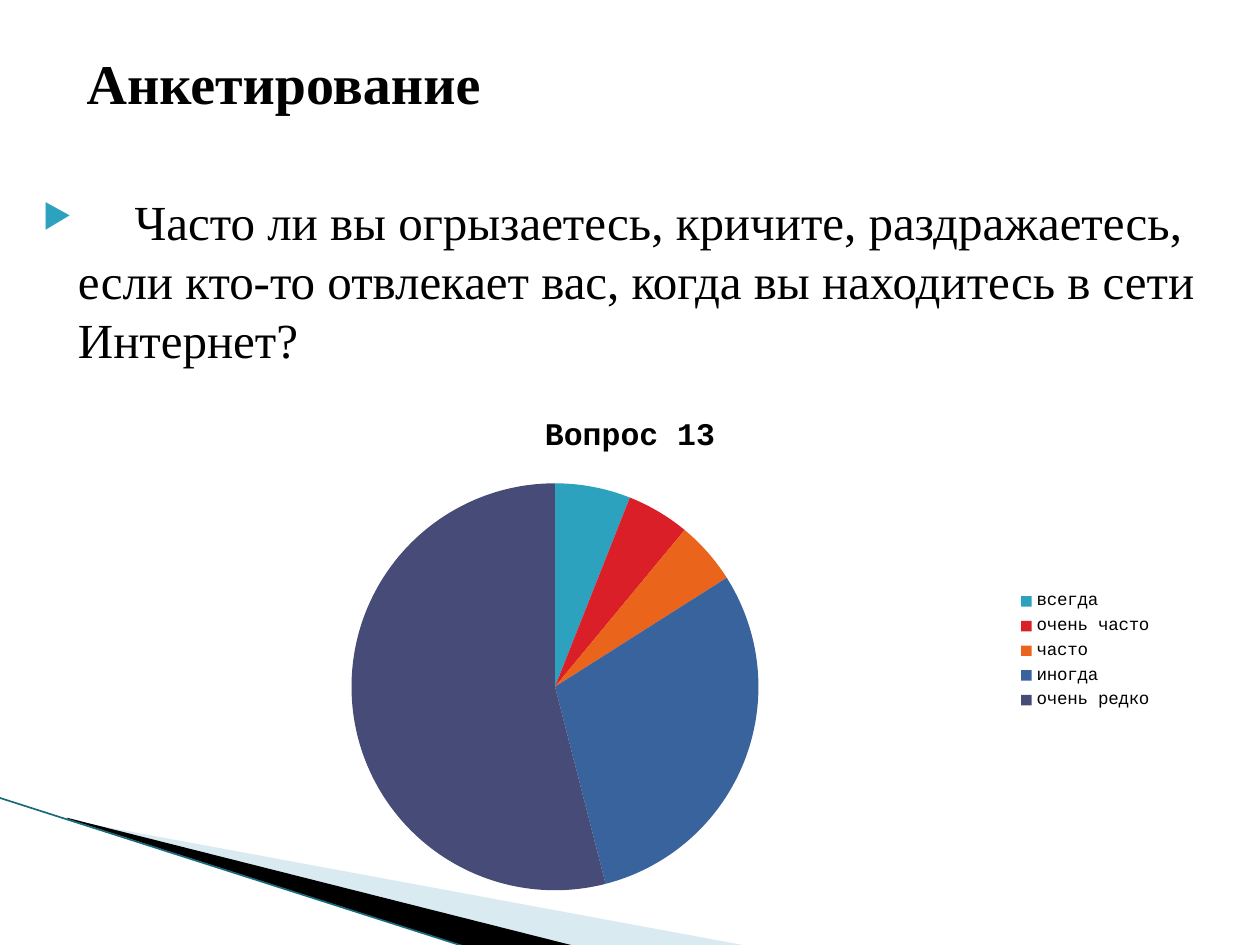
from lxml import etree
from pptx import Presentation
from pptx.chart.data import CategoryChartData
from pptx.dml.color import RGBColor
from pptx.enum.chart import XL_CHART_TYPE as ChartType, XL_LEGEND_POSITION as LegendPos
from pptx.enum.shapes import MSO_CONNECTOR as Connector
from pptx.enum.text import MSO_ANCHOR as Anchor
from pptx.oxml import parse_xml
from pptx.oxml.ns import nsdecls, qn
from pptx.util import Inches, Pt


def rgb(code):
    return RGBColor.from_string(code)


def add_text(text, left, top, width, height, size, bold=False,
             anchor=Anchor.TOP, paragraph_xml=(), indent=None):
    frame = slide.shapes.add_textbox(
        Inches(left), Inches(top), Inches(width), Inches(height)).text_frame
    frame.word_wrap = True
    frame.vertical_anchor = anchor
    paragraph = frame.paragraphs[0]
    props = paragraph._p.get_or_add_pPr()
    if indent:
        props.set("marL", str(Inches(indent[0])))
        props.set("indent", str(Inches(indent[1])))
    for xml in paragraph_xml:
        props.append(parse_xml(xml))
    run = paragraph.add_run()
    run.text = text
    run.font.name = "Times New Roman"
    run.font.size = Pt(size)
    run.font.bold = bold
    run.font.color.rgb = rgb("000000")


prs = Presentation()
prs.slide_width, prs.slide_height = Inches(10), Inches(7.5)
slide = prs.slides.add_slide(prs.slide_layouts[6])

# Corner wedges: points, colour, opacity in percent
wedges = [
    ([(0.55, 6.51), (5.95, 7.51), (4.56, 7.51), (0.55, 6.5)], "A0CBDC", 40),
    ([(0.53, 6.49), (4.57, 7.51), (3.72, 7.52), (0.54, 6.5)], "000000", 100),
]
for points, color, opacity in wedges:
    start, *rest = [(Inches(x), Inches(y)) for x, y in points]
    outline = slide.shapes.build_freeform(*start)
    outline.add_line_segments(rest, close=True)
    wedge = outline.convert_to_shape()
    wedge.shadow.inherit = False
    wedge.line.fill.background()
    wedge.fill.solid()
    wedge.fill.fore_color.rgb = rgb(color)
    if opacity < 100:
        solid = wedge._element.spPr.find(qn("a:solidFill"))
        etree.SubElement(solid[0], qn("a:alpha")).set("val", str(opacity * 1000))

# Corner edge line
edge = slide.shapes.add_connector(
    Connector.STRAIGHT, Inches(-0.01), Inches(6.33), Inches(3.71), Inches(7.52))
edge.line.color.rgb = rgb("1A6A7D")
edge.line.width = Pt(0.95)
etree.SubElement(edge._element.spPr, qn("a:effectLst"))

# Question, with a tab after the bullet
ns = nsdecls("a")
question_format = [
    f'<a:buClr {ns}><a:srgbClr val="2DA2BF"/></a:buClr>',
    f'<a:buSzPct {ns} val="68000"/>',
    f'<a:buChar {ns} char="▶"/>',
    f'<a:tabLst {ns}><a:tab pos="{Inches(0.85)}" algn="l"/></a:tabLst>',
]
add_text("\tЧасто ли вы огрызаетесь, кричите, раздражаетесь, если кто-то "
         "отвлекает вас, когда вы находитесь в сети Интернет?",
         0.12, 1.47, 9.58, 1.6, size=28,
         paragraph_xml=question_format, indent=(0.4, -0.28))

# Title
add_text("Анкетирование", 0.59, 0.03, 8.17, 1.25, size=32, bold=True,
         anchor=Anchor.MIDDLE)

# Pie of answers
answers = [
    ("всегда", 6, "2DA2BF"),
    ("очень часто", 5, "DA1F28"),
    ("часто", 5, "EB641B"),
    ("иногда", 30, "39639D"),
    ("очень редко", 54, "474B78"),
]
data = CategoryChartData()
data.categories = [name for name, _, _ in answers]
data.add_series("Вопрос 13", [value for _, value, _ in answers])
chart = slide.shapes.add_chart(
    ChartType.PIE, Inches(0.75), Inches(3.12), Inches(8.5), Inches(4.09), data).chart
chart.font.name = "Courier New"
chart.font.size = Pt(10)
chart.font.color.rgb = rgb("000000")

chart.has_title = True
heading = chart.chart_title.text_frame
heading.text = "Вопрос 13"
heading_font = heading.paragraphs[0].runs[0].font
heading_font.name = "Courier New"
heading_font.size = Pt(18)
heading_font.bold = True
heading_font.color.rgb = rgb("000000")

chart.has_legend = True
chart.legend.position = LegendPos.RIGHT
chart.legend.include_in_layout = False

pie = chart.plots[0]
pie.vary_by_categories = True
for index, (_, _, color) in enumerate(answers):
    fill = pie.series[0].points[index].format.fill
    fill.solid()
    fill.fore_color.rgb = rgb(color)

# Place of the pie, as shares of the chart area
plot_area = chart._chartSpace.chart.plotArea
for old in plot_area.findall(qn("c:layout")):
    plot_area.remove(old)
plot_area.insert(0, parse_xml(
    f'<c:layout {nsdecls("c")}><c:manualLayout><c:layoutTarget val="inner"/>'
    '<c:xMode val="edge"/><c:yMode val="edge"/><c:x val="0.24"/><c:y val="0.17"/>'
    '<c:w val="0.38"/><c:h val="0.8"/></c:manualLayout></c:layout>'))

prs.save("out.pptx")
